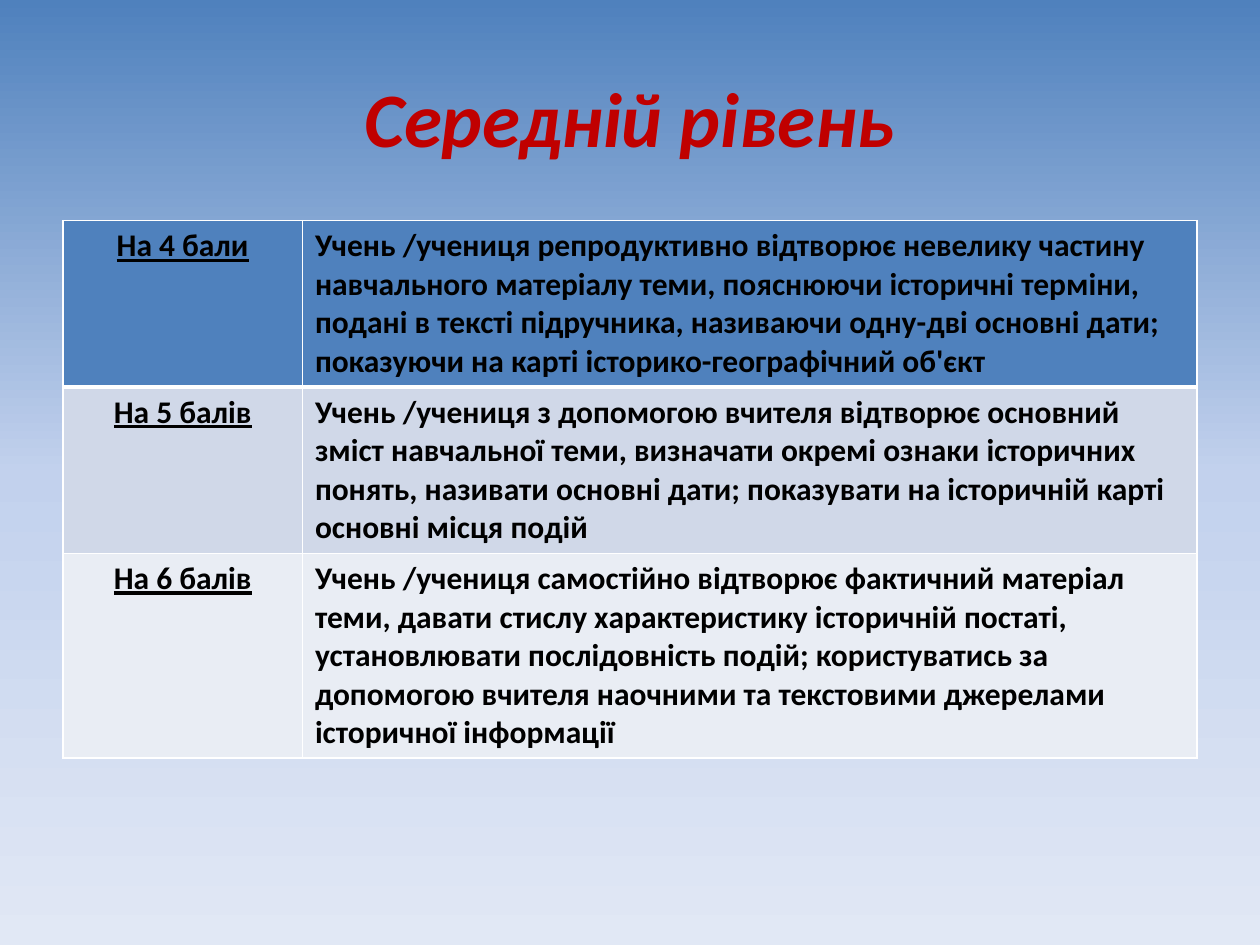
from copy import deepcopy

from lxml import etree
from pptx import Presentation
from pptx.dml.color import RGBColor
from pptx.enum.text import MSO_ANCHOR, PP_ALIGN
from pptx.oxml.ns import qn
from pptx.util import Pt

CENTER, LEFT = PP_ALIGN.CENTER, PP_ALIGN.LEFT
MIDDLE = MSO_ANCHOR.MIDDLE
FONT = "Calibri"
COLORS = {
    "title": "C00000",
    "text": "000000",
    "border": "FFFFFF",
    "sky_top": "4F81BD",
    "sky_middle": "C2D1ED",
    "sky_bottom": "E1E8F5",
}
ROWS = [
    ("На 4 бали", "Учень /учениця репродуктивно відтворює невелику частину навчального "
     "матеріалу теми, пояснюючи історичні терміни, подані в тексті підручника, називаючи "
     "одну-дві основні дати; показуючи на карті історико-географічний об'єкт", "4F81BD", 95),
    ("На 5 балів", "Учень /учениця з допомогою вчителя відтворює основний зміст навчальної "
     "теми, визначати окремі ознаки історичних понять, називати основні дати; показувати "
     "на історичній карті основні місця подій", "D0D8E8", 95),
    ("На 6 балів", "Учень /учениця самостійно відтворює фактичний матеріал теми, давати "
     "стислу характеристику історичній постаті, установлювати послідовність подій; "
     "користуватись за допомогою вчителя наочними та текстовими джерелами історичної "
     "інформації", "E9EDF4", 117),
]


def add_text(paragraph, text, size, color, alignment):
    paragraph.alignment = alignment
    run = paragraph.add_run()
    run.text = text
    run.font.name = FONT
    run.font.size = Pt(size)
    run.font.bold = True
    run.font.color.rgb = RGBColor.from_string(COLORS[color])
    return run


def set_border(cell, side, width):
    line = etree.SubElement(cell._tc.get_or_add_tcPr(), qn(f"a:{side}"), w=str(Pt(width)))
    fill = etree.SubElement(line, qn("a:solidFill"))
    etree.SubElement(fill, qn("a:srgbClr"), val=COLORS["border"])


presentation = Presentation()
presentation.slide_width, presentation.slide_height = Pt(720), Pt(540)
slide = presentation.slides.add_slide(presentation.slide_layouts[5])

background = slide.background.fill
background.gradient()
background.gradient_angle = 270
stop_list = slide.element.find(".//" + qn("a:gsLst"))
stop_list.append(deepcopy(stop_list[-1]))
sky = [(0, "sky_top"), (0.5, "sky_middle"), (1, "sky_bottom")]
for stop, (position, color) in zip(background.gradient_stops, sky):
    stop.position = position
    stop.color.rgb = RGBColor.from_string(COLORS[color])

title = slide.shapes.title
title.left, title.top, title.width, title.height = Pt(36), Pt(21.6), Pt(648), Pt(90)
title.text_frame.vertical_anchor = MIDDLE
title_run = add_text(title.text_frame.paragraphs[0], "Середній рівень", 44, "title", CENTER)
title_run.font.italic = True

table_height = sum(row[-1] for row in ROWS)
table = slide.shapes.add_table(len(ROWS), 2, Pt(36), Pt(126), Pt(648), Pt(table_height)).table
for column, width in zip(table.columns, (136.8, 511.2)):
    column.width = Pt(width)

for row_index, (grade, description, row_color, height) in enumerate(ROWS):
    table.rows[row_index].height = Pt(height)
    top_width = 3 if row_index == 1 else 1
    bottom_width = 3 if row_index == 0 else 1
    for column_index, text in enumerate((grade, description)):
        cell = table.cell(row_index, column_index)
        is_grade = column_index == 0
        run = add_text(cell.text_frame.paragraphs[0], text, 18, "text",
                       CENTER if is_grade else LEFT)
        run.font.underline = is_grade
        for side, width in (("lnL", 1), ("lnR", 1), ("lnT", top_width), ("lnB", bottom_width)):
            set_border(cell, side, width)
        cell.fill.solid()
        cell.fill.fore_color.rgb = RGBColor.from_string(row_color)

presentation.save("out.pptx")
